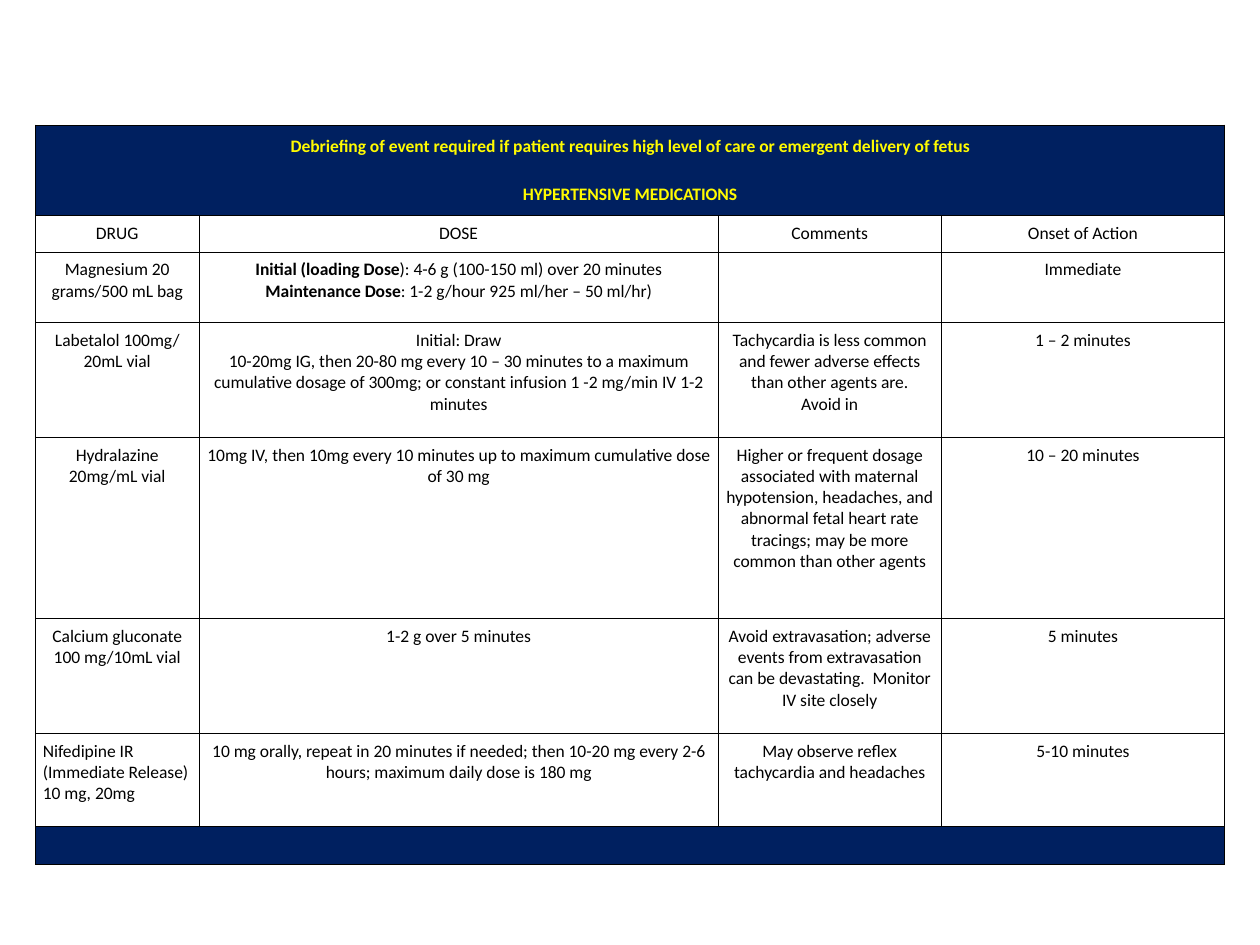
from pptx import Presentation
from pptx.dml.color import RGBColor
from pptx.enum.text import PP_ALIGN
from pptx.oxml import parse_xml
from pptx.oxml.ns import nsdecls
from pptx.util import Inches, Pt

LEFT, CENTER = PP_ALIGN.LEFT, PP_ALIGN.CENTER
COLORS = {"navy": "002060", "yellow": "FFFB00", "black": "000000"}
WIDTHS = [1.3, 1.05, 3.07, 1.3, 0.47, 2.25]
HEIGHTS = [0.72, 0.28, 0.56, 0.91, 1.44, 0.91, 0.74, 0.3]
SPANS = [(0, 0), (1, 2), (3, 4), (5, 5)]

TITLES = [
    "Debriefing of event required if patient requires high level of care or emergent delivery of fetus",
    "HYPERTENSIVE MEDICATIONS",
]
DRUGS = [
    ["DRUG", "DOSE", "Comments", "Onset of Action"],
    ["Magnesium 20 grams/500 mL bag",
     [[("Initial (loading Dose", True), ("): 4-6 g (100-150 ml) over 20 minutes", False)],
      [("Maintenance Dose", True), (": 1-2 g/hour 925 ml/her – 50 ml/hr)", False)]],
     "", "Immediate"],
    ["Labetalol 100mg/ 20mL vial",
     ["Initial: Draw",
      "10-20mg IG, then 20-80 mg every 10 – 30 minutes to a maximum cumulative dosage of 300mg; "
      "or constant infusion 1 -2 mg/min IV 1-2 minutes"],
     ["Tachycardia is less common and fewer adverse effects than other agents are.", "Avoid in"],
     "1 – 2 minutes"],
    ["Hydralazine 20mg/mL vial",
     "10mg IV, then 10mg every 10 minutes up to maximum cumulative dose of 30 mg",
     "Higher or frequent dosage associated with maternal hypotension, headaches, and abnormal "
     "fetal heart rate tracings; may be more common than other agents",
     "10 – 20 minutes"],
    ["Calcium gluconate 100 mg/10mL vial", "1-2 g over 5 minutes",
     "Avoid extravasation; adverse events from extravasation can be devastating.  "
     "Monitor IV site closely",
     "5 minutes"],
    ["Nifedipine IR (Immediate Release) 10 mg, 20mg",
     "10 mg orally, repeat in 20 minutes if needed; then 10-20 mg every 2-6 hours; "
     "maximum daily dose is 180 mg",
     "May observe reflex tachycardia and headaches", "5-10 minutes"],
]


class Deck:
    def __init__(self, slide, font="Calibri", size=10):
        self.slide, self.font, self.size = slide, font, size

    def grid(self, left, top, widths, heights):
        frame = self.slide.shapes.add_table(
            len(heights), len(widths), Inches(left), Inches(top),
            Inches(sum(widths)), Inches(sum(heights)))
        table = frame.table
        table.first_row = table.horz_banding = False
        for col, width in zip(table.columns, widths):
            col.width = Inches(width)
        for row, height in zip(table.rows, heights):
            row.height = Inches(height)
        for cell in table.iter_cells():
            self.edge(cell)
        return table

    def edge(self, cell):
        cell.margin_left = cell.margin_right = Inches(0.06)
        cell.margin_top = cell.margin_bottom = Inches(0.06)
        cell.fill.background()
        cell.text_frame.paragraphs[0].font.size = Pt(self.size)
        props = cell._tc.get_or_add_tcPr()
        for spot, side in enumerate("LRTB"):
            props.insert(spot, parse_xml(
                f'<a:ln{side} {nsdecls("a")} w="{Pt(0.25)}"><a:solidFill>'
                f'<a:srgbClr val="{COLORS["black"]}"/></a:solidFill></a:ln{side}>'))

    def merge(self, table, row, first, last):
        cell = table.cell(row, first)
        if last > first:
            cell.merge(table.cell(row, last))
        return cell

    def band(self, table, row):
        cell = self.merge(table, row, 0, len(table.columns) - 1)
        cell.fill.solid()
        cell.fill.fore_color.rgb = RGBColor.from_string(COLORS["navy"])
        return cell

    def label(self, cell, lines, color="black", bold=False, align=CENTER, lead=None, gap=0):
        if isinstance(lines, str):
            lines = [lines]
        frame = cell.text_frame
        for index, line in enumerate(lines):
            para = frame.add_paragraph() if index else frame.paragraphs[0]
            para.alignment = align
            if lead:
                para.line_spacing = lead
            if index and gap:
                para.space_before = Pt(gap)
            for text, heavy in [(line, bold)] if isinstance(line, str) else line:
                run = para.add_run()
                run.text = text
                run.font.name, run.font.size = self.font, Pt(self.size)
                run.font.bold = heavy
                run.font.color.rgb = RGBColor.from_string(COLORS[color])


def main():
    prs = Presentation()
    prs.slide_width, prs.slide_height = Inches(10), Inches(7.5)
    deck = Deck(prs.slides.add_slide(prs.slide_layouts[6]))
    table = deck.grid(0.28, 0.99, WIDTHS, HEIGHTS)
    deck.label(deck.band(table, 0), TITLES, "yellow", True, lead=1.15, gap=14)
    for row, drug in enumerate(DRUGS, 1):
        for col, (span, text) in enumerate(zip(SPANS, drug)):
            cell = deck.merge(table, row, *span)
            align = LEFT if row == len(DRUGS) and col == 0 else CENTER
            if text:
                deck.label(cell, text, align=align)
    deck.band(table, len(HEIGHTS) - 1)
    prs.save("out.pptx")


if __name__ == "__main__":
    main()
